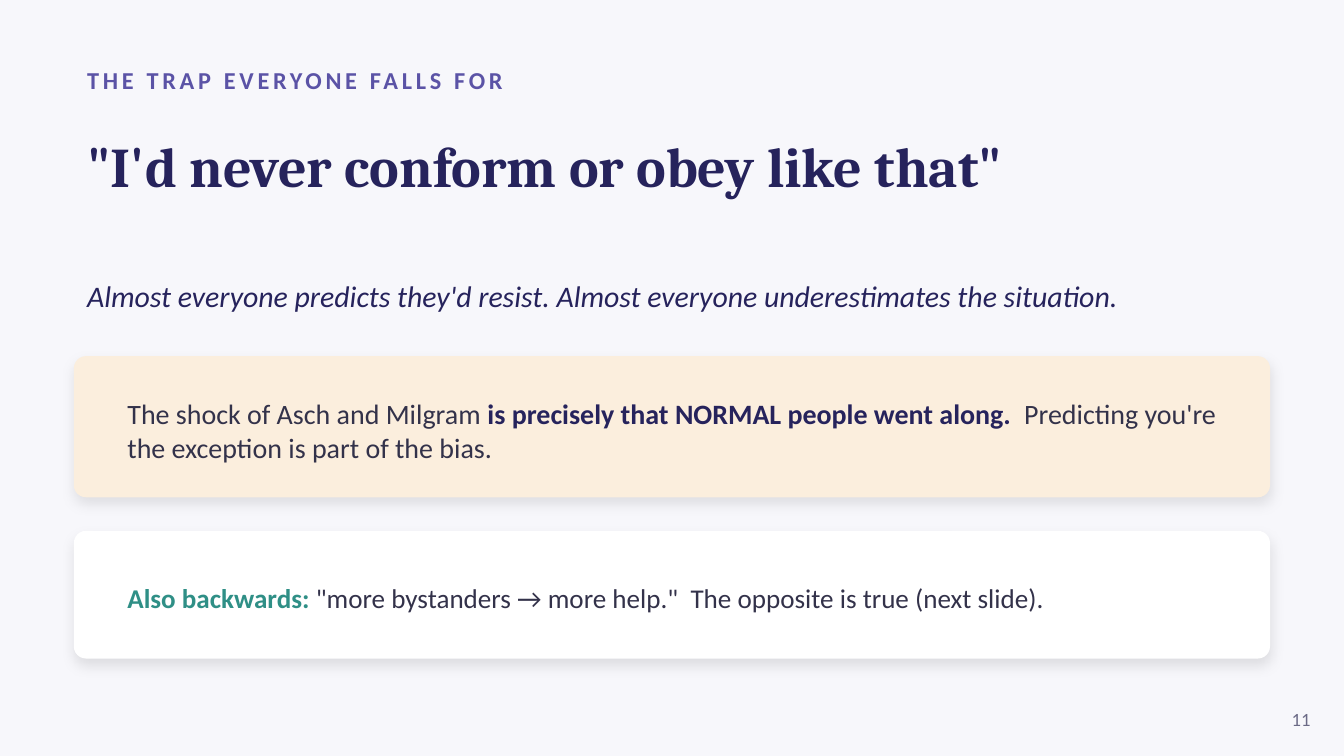
from lxml.etree import SubElement as Sub
from pptx import Presentation
from pptx.dml.color import RGBColor
from pptx.enum.shapes import MSO_SHAPE as Shape
from pptx.enum.text import MSO_ANCHOR as Anchor, MSO_AUTO_SIZE as Fit, PP_ALIGN as Align
from pptx.oxml.ns import qn
from pptx.util import Inches, Pt

WIDE = 10
HIGH = WIDE * 9 / 16
EDGE = 0.055 * WIDE
SPAN = WIDE - 2 * EDGE
PAD = 0.03 * WIDE
NAVY, INK, TEAL = "26235C", "33324A", "2F8F86"


def tint(code):
    """Turn a hex string into a colour."""
    return RGBColor.from_string(code)


def place(*box):
    """Turn left, top, width and height into slide lengths."""
    return [Inches(side) for side in box]


def write(shape, runs, size, face="Calibri", align=Align.LEFT, italic=False):
    """Fill a shape with one paragraph of (text, colour, bold) runs."""
    frame = shape.text_frame
    frame.word_wrap = True
    frame.auto_size = Fit.NONE
    frame.vertical_anchor = Anchor.MIDDLE
    para = frame.paragraphs[0]
    para.alignment = align
    para.font.size, para.font.name = Pt(size), face
    para.font.italic = italic
    for text, code, bold in runs:
        run = para.add_run()
        run.text = text
        run.font.bold = bold
        run.font.color.rgb = tint(code)
    return para


def label(slide, box, runs, size, **style):
    """Add a text box and return its paragraph."""
    return write(slide.shapes.add_textbox(*place(*box)), runs, size, **style)


def head(slide, text):
    """Move and format the title."""
    title = slide.shapes.title
    title.left, title.top, title.width, title.height = place(EDGE, 0.78, SPAN, 0.9)
    write(title, [(text, NAVY, True)], 30, face="Cambria")


def shade(shape):
    """Give a shape a soft shadow below it."""
    shape.shadow.inherit = False
    effects = shape._element.spPr.find(qn("a:effectLst"))
    outer = Sub(effects, qn("a:outerShdw"), blurRad=str(Pt(7)), dist=str(Pt(3)),
                dir="5400000", algn="bl", rotWithShape="0")
    color = Sub(outer, qn("a:srgbClr"), val="000000")
    Sub(color, qn("a:alpha"), val="10000")


def card(slide, top, high, body, fill, runs, size):
    """Add a rounded card with inset text of the given height."""
    panel = slide.shapes.add_shape(Shape.ROUNDED_RECTANGLE, *place(EDGE, top, SPAN, high))
    panel.adjustments[0] = 0.09 / high
    panel.fill.solid()
    panel.fill.fore_color.rgb = tint(fill)
    panel.line.fill.background()
    shade(panel)
    label(slide, (EDGE + PAD, top + 0.2, SPAN - 2 * PAD, body), runs, size)


def main():
    """Build the slide and save it."""
    deck = Presentation()
    deck.slide_width, deck.slide_height = Inches(WIDE), Inches(HIGH)
    slide = deck.slides.add_slide(deck.slide_layouts[5])
    slide.background.fill.solid()
    slide.background.fill.fore_color.rgb = tint("F7F7FB")

    topic = label(slide, (EDGE, 0.42, 9, 0.35),
                  [("THE TRAP EVERYONE FALLS FOR", "5B53A6", True)], 13)
    topic.runs[0].font._element.set("spc", "200")
    head(slide, "\"I'd never conform or obey like that\"")
    label(slide, (EDGE, 1.95, SPAN, 0.5),
          [("Almost everyone predicts they'd resist. "
            "Almost everyone underestimates the situation.", NAVY, False)], 16, italic=True)

    card(slide, 2.65, 1.05, 0.7, "FBEEDD", [
        ("The shock of Asch and Milgram ", INK, False),
        ("is precisely that NORMAL people went along.", NAVY, True),
        ("  Predicting you're the exception is part of the bias.", INK, False)], 15)
    card(slide, 3.95, 0.95, 0.6, "FFFFFF", [
        ("Also backwards: ", TEAL, True),
        ("\"more bystanders → more help.\"  The opposite is true (next slide).", INK, False)], 14.5)
    label(slide, (9.35, 5.2, 0.5, 0.3), [("11", "6B6A86", False)], 10, align=Align.RIGHT)
    deck.save("out.pptx")


if __name__ == "__main__":
    main()
